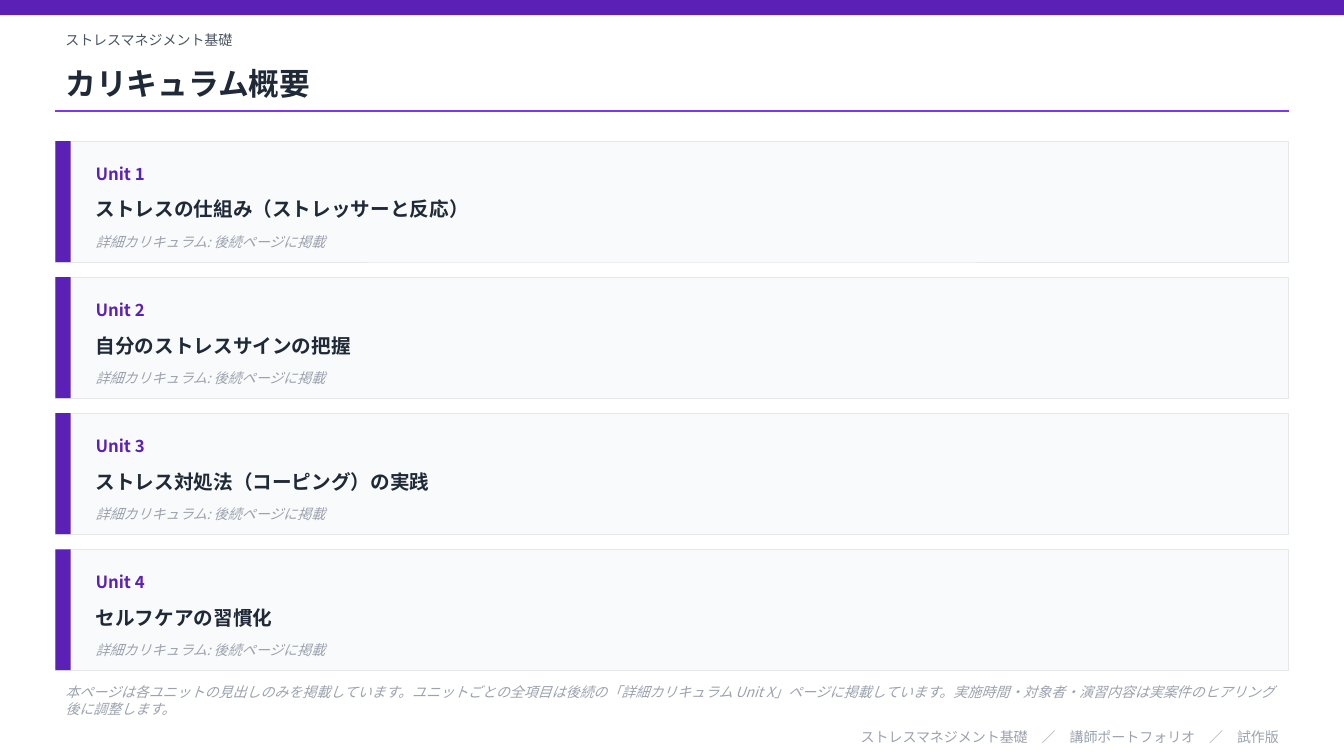
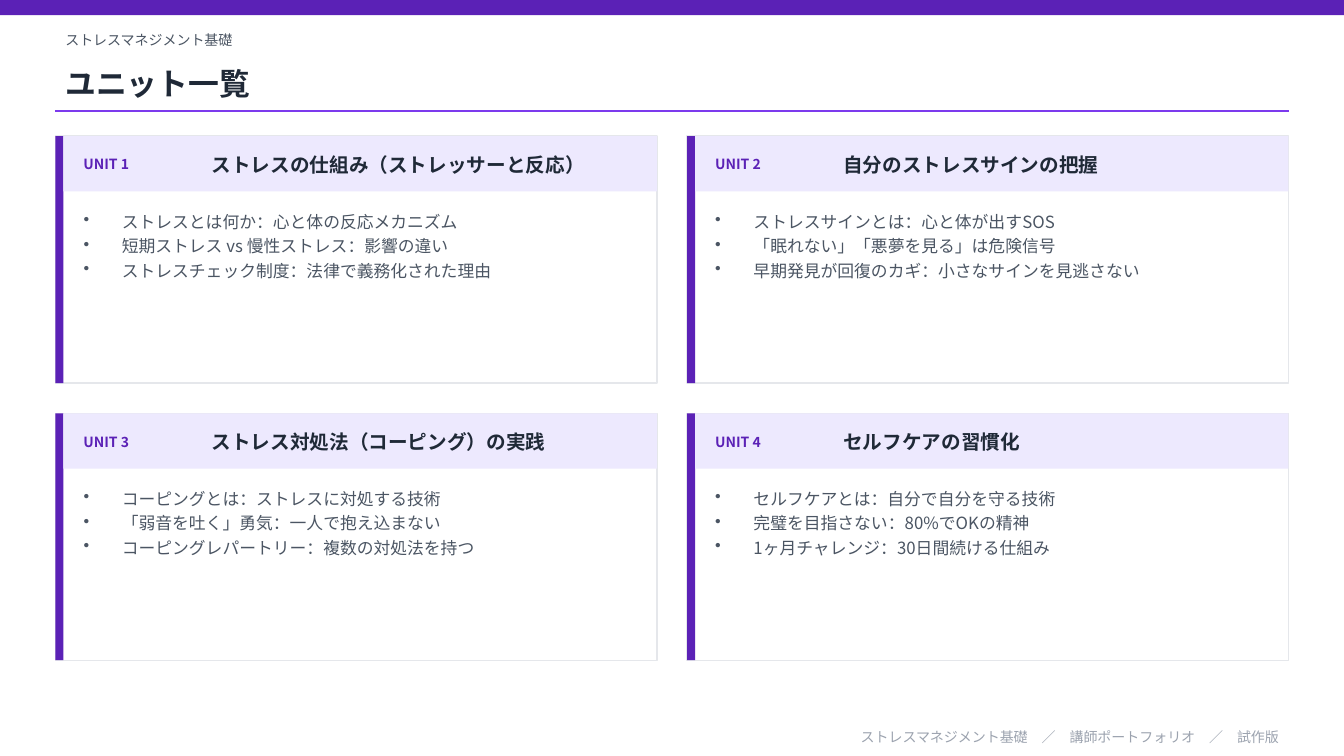
from dataclasses import dataclass

from lxml.etree import SubElement
from pptx import Presentation
from pptx.dml.color import RGBColor
from pptx.enum.shapes import MSO_CONNECTOR, MSO_SHAPE
from pptx.enum.text import MSO_ANCHOR, PP_ALIGN
from pptx.oxml.ns import qn
from pptx.util import Inches, Pt


@dataclass(frozen=True)
class Theme:
    font: str = "Noto Sans CJK JP"
    accent: str = "5B21B6"
    rule: str = "7C3AED"
    tint: str = "EDE9FE"
    card: str = "F9FAFB"
    white: str = "FFFFFF"
    border: str = "E5E7EB"
    ink: str = "1F2937"
    body: str = "4B5563"
    muted: str = "9CA3AF"
    title_size: int = 22
    heading_size: int = 14
    body_size: int = 12
    small_size: int = 10


theme = Theme()

COURSE = "ストレスマネジメント基礎"
FOOTER = f"{COURSE}　／　講師ポートフォリオ　／　試作版"
UNITS = [
    ("ストレスの仕組み（ストレッサーと反応）", [
        "ストレスとは何か：心と体の反応メカニズム",
        "短期ストレス vs 慢性ストレス：影響の違い",
        "ストレスチェック制度：法律で義務化された理由",
    ]),
    ("自分のストレスサインの把握", [
        "ストレスサインとは：心と体が出すSOS",
        "「眠れない」「悪夢を見る」は危険信号",
        "早期発見が回復のカギ：小さなサインを見逃さない",
    ]),
    ("ストレス対処法（コーピング）の実践", [
        "コーピングとは：ストレスに対処する技術",
        "「弱音を吐く」勇気：一人で抱え込まない",
        "コーピングレパートリー：複数の対処法を持つ",
    ]),
    ("セルフケアの習慣化", [
        "セルフケアとは：自分で自分を守る技術",
        "完璧を目指さない：80%でOKの精神",
        "1ヶ月チャレンジ：30日間続ける仕組み",
    ]),
]

# Page grid, in inches
PAGE_WIDTH, PAGE_HEIGHT = 13.33, 7.5
MARGIN = 0.55
CONTENT_WIDTH = PAGE_WIDTH - 2 * MARGIN


def add_panel(page, left, top, width, height, fill, border_width=0):
    panel = page.shapes.add_shape(
        MSO_SHAPE.RECTANGLE, Inches(left), Inches(top), Inches(width), Inches(height))
    panel.shadow.inherit = False
    panel.fill.solid()
    panel.fill.fore_color.rgb = RGBColor.from_string(fill)
    if border_width:
        panel.line.color.rgb = RGBColor.from_string(theme.border)
        panel.line.width = Pt(border_width)
    else:
        panel.line.fill.background()


def add_text(page, left, top, width, height, text, size, color, bold=False,
             italic=False, align=None, bullets=False):
    box = page.shapes.add_textbox(Inches(left), Inches(top), Inches(width), Inches(height))
    frame = box.text_frame
    frame.word_wrap = True
    frame.vertical_anchor = MSO_ANCHOR.TOP if bullets else MSO_ANCHOR.MIDDLE
    frame.text = text
    for para in frame.paragraphs:
        para.alignment = align
        if bullets:
            para.space_after = Pt(3)
            properties = para._p.get_or_add_pPr()
            properties.set("marL", str(Inches(0.38)))
            properties.set("indent", str(-Inches(0.38)))
            SubElement(properties, qn("a:buChar")).set("char", "•")
        for span in para.runs:
            span.font.size = Pt(size)
            span.font.bold = bold
            span.font.italic = italic
            span.font.color.rgb = RGBColor.from_string(color)
            span.font.name = theme.font
            SubElement(span.font._element, qn("a:ea")).set("typeface", theme.font)


deck = Presentation()
deck.slide_width, deck.slide_height = Inches(PAGE_WIDTH), Inches(PAGE_HEIGHT)

# Shared band, title, rule and footer
pages = []
for title in ("カリキュラム概要", "ユニット一覧"):
    page = deck.slides.add_slide(deck.slide_layouts[6])
    add_panel(page, 0, 0, PAGE_WIDTH, 0.15, theme.accent)
    add_text(page, MARGIN, 0.25, CONTENT_WIDTH, 0.3, COURSE, theme.small_size, theme.body)
    add_text(page, MARGIN, 0.55, CONTENT_WIDTH, 0.55, title,
             theme.title_size, theme.ink, bold=True)
    rule = page.shapes.add_connector(
        MSO_CONNECTOR.STRAIGHT, Inches(MARGIN), Inches(1.1),
        Inches(MARGIN + CONTENT_WIDTH), Inches(1.1))
    rule.line.color.rgb = RGBColor.from_string(theme.rule)
    rule.line.width = Pt(1)
    SubElement(rule._element.spPr, qn("a:effectLst"))
    add_text(page, MARGIN, 7.2, CONTENT_WIDTH, 0.22, FOOTER,
             theme.small_size, theme.muted, align=PP_ALIGN.RIGHT)
    pages.append(page)
overview, unit_list = pages

# Curriculum overview: one full-width row per unit
ROW_HEIGHT, ROW_GAP = 1.2, 0.15
row_text_left = MARGIN + 0.3
row_text_width = CONTENT_WIDTH - 0.5
for index, (heading, _) in enumerate(UNITS):
    top = 1.4 + index * (ROW_HEIGHT + ROW_GAP)
    add_panel(overview, MARGIN, top, CONTENT_WIDTH, ROW_HEIGHT, theme.card, 0.5)
    add_panel(overview, MARGIN, top, 0.15, ROW_HEIGHT, theme.accent)
    add_text(overview, row_text_left, top + 0.12, 1.5, 0.4, f"Unit {index + 1}",
             theme.body_size, theme.accent, bold=True)
    add_text(overview, row_text_left, top + 0.45, row_text_width, 0.45, heading,
             theme.heading_size, theme.ink, bold=True)
    add_text(overview, row_text_left, top + 0.85, row_text_width, 0.3,
             "詳細カリキュラム: 後続ページに掲載", theme.small_size, theme.muted, italic=True)

add_text(overview, MARGIN, 6.75, CONTENT_WIDTH, 0.4,
         "本ページは各ユニットの見出しのみを掲載しています。"
         "ユニットごとの全項目は後続の「詳細カリキュラム Unit X」ページに掲載しています。"
         "実施時間・対象者・演習内容は実案件のヒアリング後に調整します。",
         theme.small_size, theme.muted, italic=True)

# Unit list: two columns by two rows of cards
COLUMNS, CARD_GAP, CARD_HEIGHT = 2, 0.3, 2.45
BAR_WIDTH = 0.08
card_width = (CONTENT_WIDTH - CARD_GAP * (COLUMNS - 1)) / COLUMNS
for index, (heading, topics) in enumerate(UNITS):
    row, column = divmod(index, COLUMNS)
    left = MARGIN + column * (card_width + CARD_GAP)
    top = 1.35 + row * (CARD_HEIGHT + CARD_GAP)
    add_panel(unit_list, left, top, card_width, CARD_HEIGHT, theme.white, 1)
    add_panel(unit_list, left, top, BAR_WIDTH, CARD_HEIGHT, theme.accent)
    add_panel(unit_list, left + BAR_WIDTH, top, card_width - BAR_WIDTH, 0.55, theme.tint)
    add_text(unit_list, left + 0.18, top + 0.08, 1.2, 0.4, f"UNIT {index + 1}",
             theme.small_size, theme.accent, bold=True)
    add_text(unit_list, left + 1.45, top + 0.08, card_width - 1.6, 0.4, heading,
             theme.heading_size, theme.ink, bold=True)
    add_text(unit_list, left + 0.18, top + 0.7, card_width - 0.36, 1.6, "\n".join(topics),
             theme.body_size, theme.body, bullets=True)

deck.save("out.pptx")
